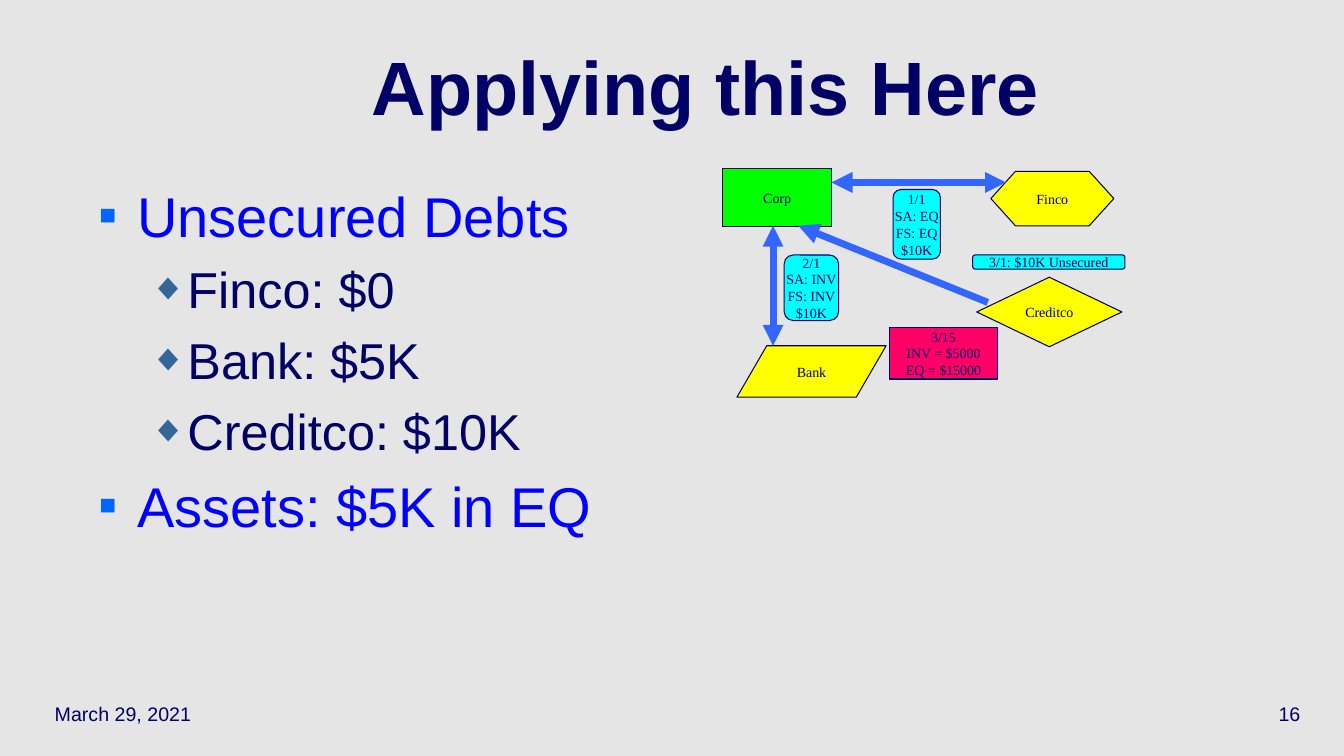
from dataclasses import dataclass
from lxml.etree import SubElement
from pptx import Presentation
from pptx.dml.color import RGBColor as Rgb
from pptx.enum.shapes import MSO_CONNECTOR as Link, MSO_SHAPE as Kind
from pptx.enum.text import MSO_ANCHOR as Anchor, MSO_AUTO_SIZE as Fit, PP_ALIGN as Align
from pptx.oxml.ns import qn
from pptx.util import Emu, Inches, Pt


@dataclass(frozen=True)
class Theme:
    back: str = "E5E5E5"
    ink: str = "000066"
    topic: str = "0000FF"
    square: str = "0066FF"
    gem: str = "336699"
    arrow: str = "3366FF"
    party: str = "FFFF00"
    corp: str = "00FF00"
    note: str = "00FFFF"
    alert: str = "FF0066"
    sans: str = "Arial"
    serif: str = "Times New Roman"
    title: int = 54
    main: int = 40
    sub: int = 36
    foot: int = 14
    label: int = 10


look = Theme()
deck = Presentation()
deck.slide_width, deck.slide_height = Emu(12192000), Inches(7.5)
cell = deck.slide_width / 120  # the grid has 120 columns and 67.5 rows


def grid(*spots):
    return [Emu(round(spot * cell)) for spot in spots]


def style(para, size, face=look.sans, color=look.ink, align=Align.LEFT):
    para.alignment = align
    para.font.size = Pt(size)
    para.font.name = face
    para.font.color.rgb = Rgb.from_string(color)


slide = deck.slides.add_slide(deck.slide_layouts[5])
slide.background.fill.solid()
slide.background.fill.fore_color.rgb = Rgb.from_string(look.back)

# Title
title = slide.shapes.title
title.left, title.top, title.width, title.height = grid(8, 3, 110, 11.25)
title.text_frame.text = "Applying this Here"
title.text_frame.auto_size = Fit.NONE
title.text_frame.vertical_anchor = Anchor.MIDDLE
head = title.text_frame.paragraphs[0]
style(head, look.title, align=Align.CENTER)
head.font.bold = True
head.line_spacing = 0.7

# Footer
for left, words, align in [(4, "March 29, 2021", Align.LEFT), (92, "16", Align.RIGHT)]:
    foot = slide.shapes.add_textbox(*grid(left, 61.5, 25, 4.5)).text_frame
    foot.word_wrap = True
    foot.vertical_anchor = Anchor.MIDDLE
    foot.text = words
    style(foot.paragraphs[0], look.foot, align=align)

# Bulleted list: size, text colour, mark, mark colour, mark percent, margin, hang
levels = [
    (look.main, look.topic, "■", look.square, 50, 3.38, 3.38),
    (look.sub, look.ink, "◆", look.gem, 75, 7.31, 2.81),
]
items = [
    (0, "Unsecured Debts"),
    (1, "Finco: $0"),
    (1, "Bank: $5K"),
    (1, "Creditco: $10K"),
    (0, "Assets: $5K in EQ"),
]
body = slide.shapes.add_textbox(*grid(8, 15.75, 110, 40.5)).text_frame
body.word_wrap = True
body.text = "\n".join(words for _, words in items)
for para, (level, _) in zip(body.paragraphs, items):
    size, color, mark, tint, share, margin, hang = levels[level]
    para.level = level
    style(para, size, color=color)
    props = para._p.get_or_add_pPr()
    for key, width in zip(("marL", "indent"), grid(margin, -hang)):
        props.set(key, str(int(width)))
    space = SubElement(props, qn("a:spcBef"))
    SubElement(space, qn("a:spcPct"), val="20000")
    SubElement(SubElement(props, qn("a:buClr")), qn("a:srgbClr"), val=tint)
    SubElement(props, qn("a:buSzPct"), val=str(share * 1000))
    SubElement(props, qn("a:buFont"), typeface=look.sans)
    SubElement(props, qn("a:buChar"), char=mark)

# Diagram: parties and the notes on their deals
card = Kind.FLOWCHART_ALTERNATE_PROCESS
nodes = [
    (Kind.FLOWCHART_DATA, look.party, "Bank", (65.8, 30.87, 13.32, 4.59)),
    (Kind.FLOWCHART_PROCESS, look.corp, "Corp", (64.53, 15.03, 9.72, 5.22)),
    (Kind.FLOWCHART_PREPARATION, look.party, "Finco", (88.47, 15.3, 10.98, 4.86)),
    (Kind.FLOWCHART_DECISION, look.party, "Creditco", (87.21, 24.75, 12.96, 6.21)),
    (card, look.note, "3/1: $10K Unsecured", (86.85, 22.77, 13.59, 1.26)),
    (card, look.note, "1/1\nSA: EQ\nFS: EQ\n$10K", (79.74, 16.92, 4.23, 6.21)),
    (card, look.note, "2/1\nSA: INV\nFS: INV\n$10K", (70.02, 22.77, 4.86, 5.85)),
    (Kind.FLOWCHART_PROCESS, look.alert, "3/15\nINV = $5000\nEQ = $15000",
     (79.38, 29.25, 9.72, 4.59)),
]
for kind, fill, words, place in nodes:
    node = slide.shapes.add_shape(kind, *grid(*place))
    node.shadow.inherit = False
    node.fill.solid()
    node.fill.fore_color.rgb = Rgb.from_string(fill)
    node.line.color.rgb = Rgb.from_string(look.ink)
    node.line.width = Pt(0.75)
    frame = node.text_frame
    frame.word_wrap = False
    frame.vertical_anchor = Anchor.MIDDLE
    frame.margin_left = frame.margin_right = frame.margin_top = frame.margin_bottom = 0
    frame.text = words
    for para in frame.paragraphs:
        style(para, look.label, look.serif, align=Align.CENTER)

# Arrows into Corp
ends = [
    ((88.2, 27, 71.28, 20.16), ["a:tailEnd"]),
    ((89.82, 16.29, 74.25, 16.29), ["a:headEnd", "a:tailEnd"]),
    ((69.03, 30.87, 69.03, 20.16), ["a:headEnd", "a:tailEnd"]),
]
for route, tips in ends:
    arrow = slide.shapes.add_connector(Link.STRAIGHT, *grid(*route))
    arrow.line.color.rgb = Rgb.from_string(look.arrow)
    arrow.line.width = Pt(5)
    for tip in tips:
        SubElement(arrow.line._get_or_add_ln(), qn(tip), type="triangle")
    SubElement(arrow._element.spPr, qn("a:effectLst"))

deck.save("out.pptx")
